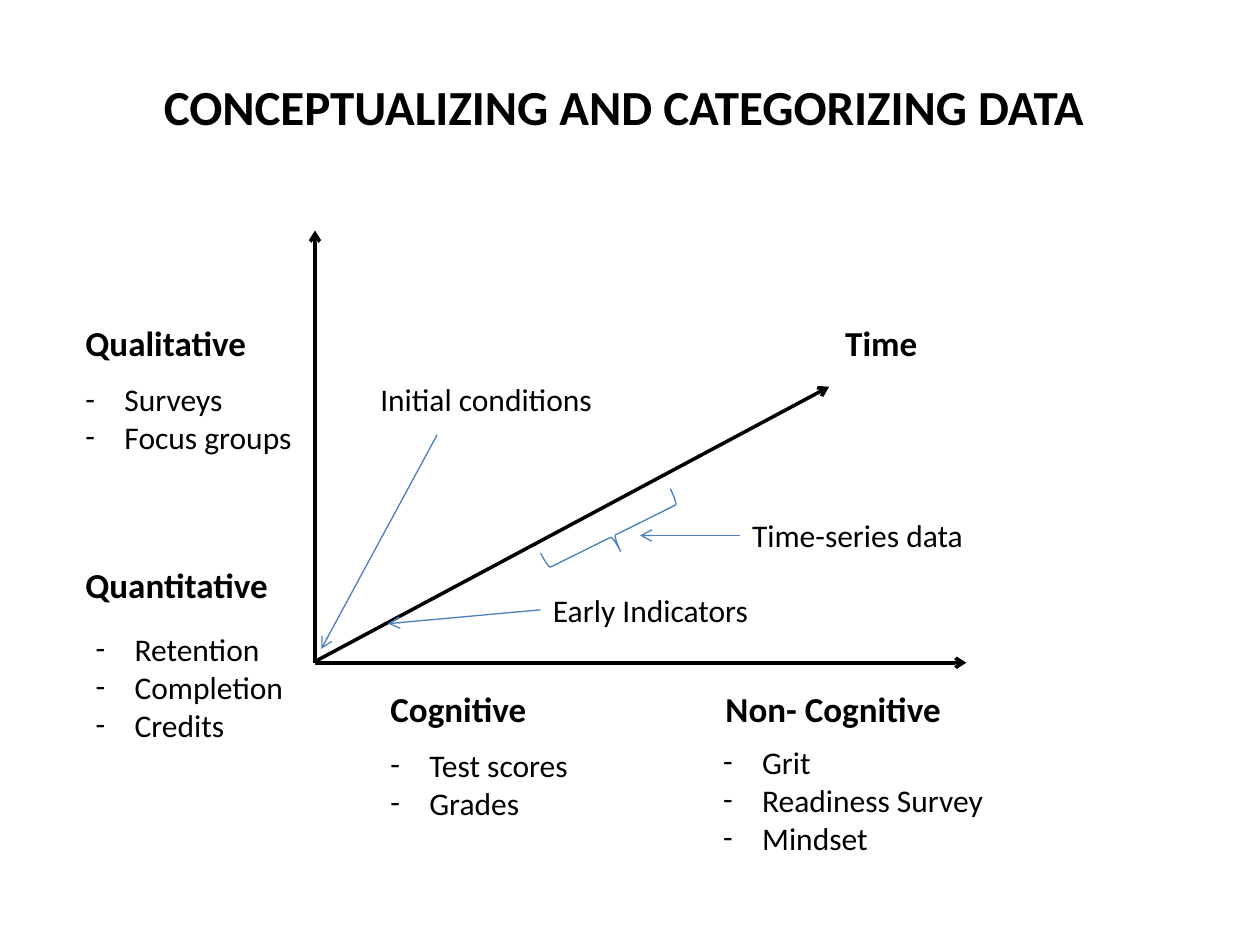
from lxml.etree import SubElement
from pptx import Presentation
from pptx.dml.color import RGBColor
from pptx.enum.shapes import MSO_CONNECTOR as Connector, MSO_SHAPE as Shape
from pptx.enum.text import MSO_ANCHOR as Anchor, MSO_AUTO_SIZE as AutoSize, PP_ALIGN as Align
from pptx.oxml.ns import qn
from pptx.util import Inches, Pt

FONT = "Calibri"
BLACK, BLUE = "000000", "4B7EBC"
INDENT = 0.31

TITLE = ("CONCEPTUALIZING AND CATEGORIZING DATA", (1.2, 0.56, 7.59, 0.57))
HEADINGS = [
    ("Quantitative", (0.58, 4.42, 1.66, 0.44)),
    ("Qualitative", (0.58, 2.5, 1.49, 0.44)),
    ("Cognitive", (3, 5.41, 1.29, 0.44)),
    ("Non- Cognitive", (5.66, 5.41, 1.93, 0.44)),
    ("Time", (6.61, 2.5, 0.78, 0.44)),
]
LISTS = [
    (["Surveys", "Focus groups"], (0.58, 2.97, 1.86, 0.71)),
    (["Retention", "Completion", "Credits"], (0.66, 4.95, 1.71, 1.01)),
    (["Test scores", "Grades"], (3, 5.87, 1.63, 0.71)),
    (["Grit", "Readiness Survey", "Mindset"], (5.64, 5.85, 2.35, 1.01)),
]
NOTES = [
    ("Initial conditions", (2.92, 2.97, 1.9, 0.4)),
    ("Early Indicators", (4.29, 4.64, 1.77, 0.4)),
    ("Time-series data", (5.87, 4.05, 1.89, 0.4)),
]
AXES = [
    ((2.5, 5.26), (2.5, 1.83)),
    ((2.5, 5.26), (7.67, 5.26)),
    ((2.5, 5.25), (6.58, 3.07)),
]
POINTERS = [
    ((3.47, 3.45), (2.55, 5.15)),
    ((4.29, 4.84), (3.08, 4.95)),
    ((5.87, 4.25), (5.08, 4.25)),
]
BRACE, BRACE_ROTATION = (4.73, 3.68, 0.27, 1.15), 63.6


def color(value):
    return RGBColor.from_string(value)


def inches(values):
    return [Inches(value) for value in values]


def add_bullet(paragraph):
    properties = paragraph._p.get_or_add_pPr()
    properties.set("marL", str(Inches(INDENT)))
    properties.set("indent", str(-Inches(INDENT)))
    for tag, attributes in (("a:buFont", {"typeface": FONT}), ("a:buChar", {"char": "-"})):
        element = properties.makeelement(qn(tag), attributes)
        properties.insert_element_before(element, "a:tabLst", "a:defRPr", "a:extLst")


def write(shape, lines, size, bold=False, bulleted=False):
    frame = shape.text_frame
    frame.text = "\n".join(lines)
    frame.word_wrap = False
    frame.auto_size = AutoSize.SHAPE_TO_FIT_TEXT
    frame.vertical_anchor = Anchor.TOP
    for paragraph in frame.paragraphs:
        paragraph.alignment = Align.LEFT
        font = paragraph.font
        font.name, font.size, font.bold = FONT, Pt(size), bold
        font.color.rgb = color(BLACK)
        if bulleted:
            add_bullet(paragraph)


def add_text(slide, lines, box, size, **style):
    write(slide.shapes.add_textbox(*inches(box)), lines, size, **style)


def add_arrow(slide, start, end, line_color, width):
    arrow = slide.shapes.add_connector(Connector.STRAIGHT, *inches(start + end))
    arrow.line.color.rgb = color(line_color)
    arrow.line.width = Pt(width)
    SubElement(arrow.line._get_or_add_ln(), qn("a:tailEnd"), type="arrow")
    SubElement(arrow._element.spPr, qn("a:effectLst"))


def add_brace(slide):
    brace = slide.shapes.add_shape(Shape.RIGHT_BRACE, *inches(BRACE))
    brace.rotation = BRACE_ROTATION
    brace.shadow.inherit = False
    brace.fill.background()
    brace.line.color.rgb = color(BLUE)
    brace.line.width = Pt(0.75)


def main():
    presentation = Presentation()
    presentation.slide_width, presentation.slide_height = Inches(10), Inches(7.5)
    slide = presentation.slides.add_slide(presentation.slide_layouts[5])

    text, box = TITLE
    title = slide.shapes.title
    title.left, title.top, title.width, title.height = inches(box)
    write(title, [text], 28, bold=True)

    for start, end in AXES:
        add_arrow(slide, start, end, BLACK, 2)
    for text, box in HEADINGS:
        add_text(slide, [text], box, 20, bold=True)
    for items, box in LISTS:
        add_text(slide, items, box, 18, bulleted=True)
    for text, box in NOTES:
        add_text(slide, [text], box, 18)
    add_brace(slide)
    for start, end in POINTERS:
        add_arrow(slide, start, end, BLUE, 0.75)

    presentation.save("out.pptx")


if __name__ == "__main__":
    main()
